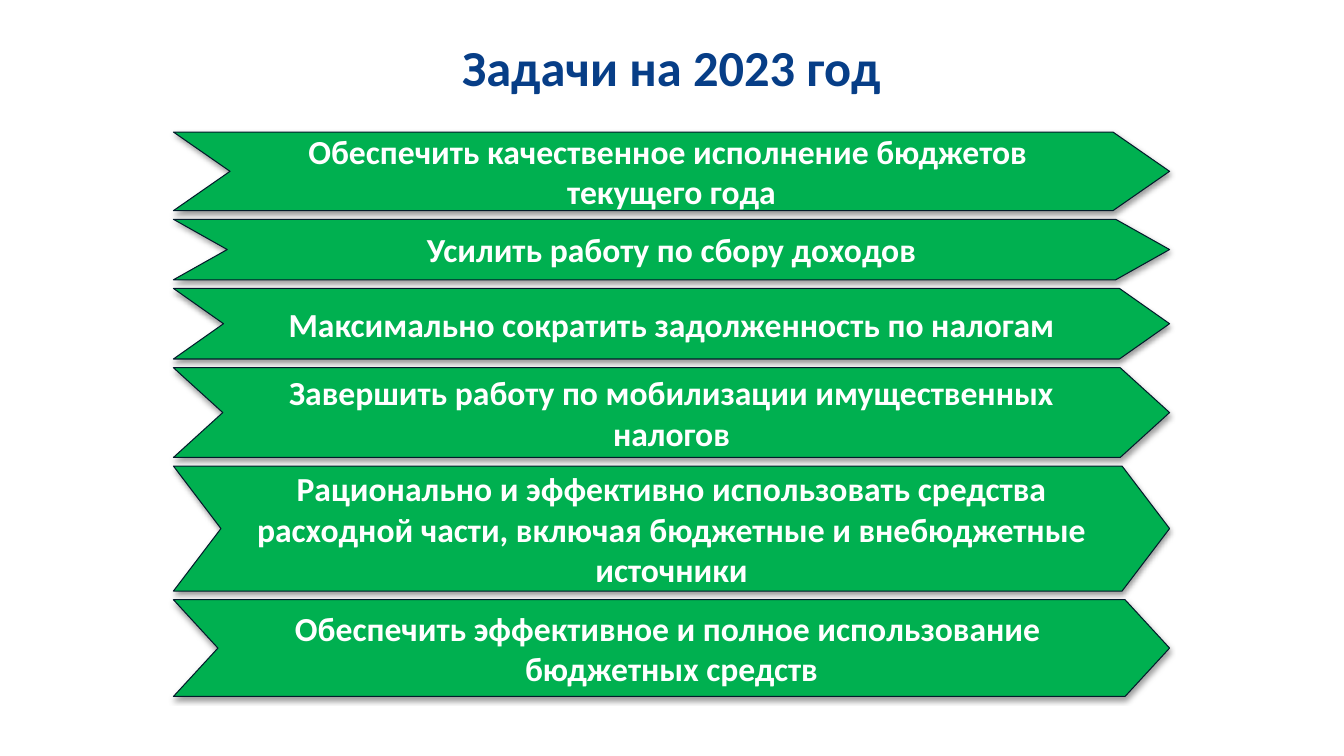
from lxml.etree import SubElement
from pptx import Presentation
from pptx.dml.color import RGBColor
from pptx.enum.shapes import MSO_SHAPE
from pptx.enum.text import MSO_ANCHOR, MSO_AUTO_SIZE, PP_ALIGN
from pptx.oxml.ns import qn
from pptx.util import Inches, Pt

TITLE = "Задачи на 2023 год"
# Text, height in inches, depth of the point relative to the height
TASKS = [
    ("Обеспечить качественное исполнение бюджетов \nтекущего года", 0.78, 0.72),
    ("Усилить работу по сбору доходов", 0.6, 0.89),
    ("Максимально сократить задолженность по налогам", 0.7, 0.71),
    ("Завершить работу по мобилизации имущественных налогов", 0.89, 0.55),
    ("Рационально и эффективно использовать средства расходной части, "
     "включая бюджетные и внебюджетные источники", 1.24, 0.38),
    ("Обеспечить эффективное и полное использование \vбюджетных средств", 0.96, 0.46),
]
LEFT, WIDTH = 1.72, 9.88
TOP, BOTTOM = 1.31, 6.91
FONT = "Calibri"
GREEN, OUTLINE, WHITE, NAVY = "00B050", "021B2B", "FFFFFF", "073E87"


def color(hex_code):
    return RGBColor.from_string(hex_code)


def write(frame, text, size, hex_code):
    """Put centred bold text into a text frame."""
    frame.text = text
    for para in frame.paragraphs:
        para.alignment = PP_ALIGN.CENTER
        for span in para.runs:
            span.font.name = FONT
            span.font.size = Pt(size)
            span.font.bold = True
            span.font.color.rgb = color(hex_code)


def add_soft_shadow(shape):
    shape.shadow.inherit = False
    effects = shape._element.spPr.find(qn("a:effectLst"))
    shadow = SubElement(effects, qn("a:outerShdw"), blurRad=str(Pt(4)),
                        dist=str(Pt(2)), dir="5400000", rotWithShape="0")
    black = SubElement(shadow, qn("a:srgbClr"), val="000000")
    SubElement(black, qn("a:alpha"), val="38000")


def add_task(page, top, text, height, depth):
    arrow = page.shapes.add_shape(MSO_SHAPE.CHEVRON, Inches(LEFT), Inches(top),
                                  Inches(WIDTH), Inches(height))
    arrow.adjustments[0] = depth
    arrow.fill.solid()
    arrow.fill.fore_color.rgb = color(GREEN)
    arrow.line.color.rgb = color(OUTLINE)
    arrow.line.width = Pt(0.75)
    add_soft_shadow(arrow)
    frame = arrow.text_frame
    frame.word_wrap = True
    frame.vertical_anchor = MSO_ANCHOR.MIDDLE
    write(frame, text, 24, WHITE)


def main():
    deck = Presentation()
    deck.slide_width, deck.slide_height = Inches(13.33), Inches(7.5)
    page = deck.slides.add_slide(deck.slide_layouts[6])

    heights = [height for _, height, _ in TASKS]
    gap = (BOTTOM - TOP - sum(heights)) / (len(TASKS) - 1)
    top = TOP
    for text, height, depth in TASKS:
        add_task(page, top, text, height, depth)
        top += height + gap

    title = page.shapes.add_textbox(Inches(4.47), Inches(0.31), Inches(4.38), Inches(0.71))
    title.text_frame.word_wrap = False
    title.text_frame.auto_size = MSO_AUTO_SIZE.SHAPE_TO_FIT_TEXT
    write(title.text_frame, TITLE, 36, NAVY)

    deck.save("out.pptx")


if __name__ == "__main__":
    main()
